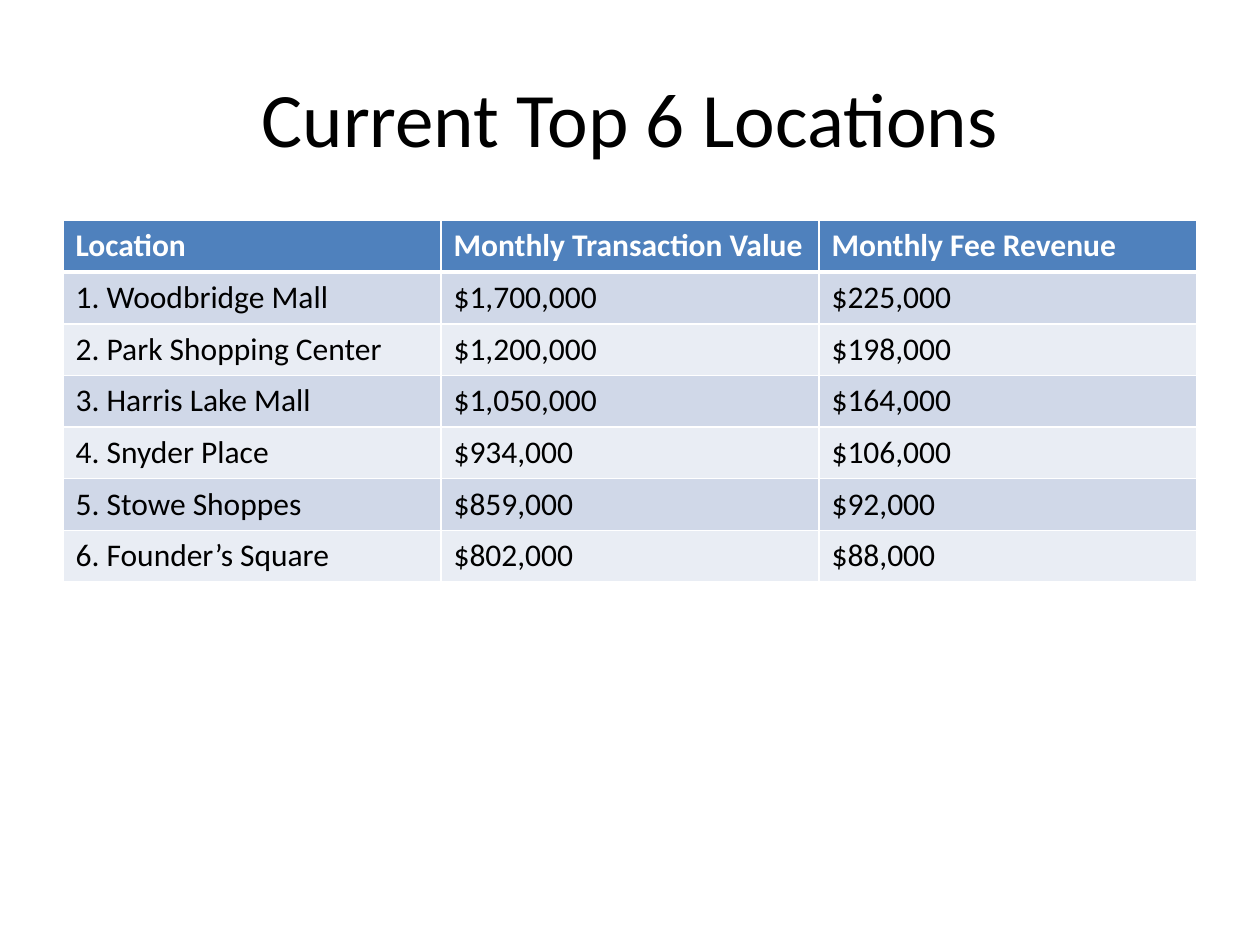
from typing import NamedTuple

from lxml.etree import SubElement
from pptx import Presentation
from pptx.dml.color import RGBColor
from pptx.enum.text import MSO_ANCHOR as Anchor, PP_ALIGN as Align
from pptx.oxml.ns import qn
from pptx.util import Inches, Pt

WHITE = RGBColor(0xFF, 0xFF, 0xFF)
BLACK = RGBColor(0x00, 0x00, 0x00)
HEADER_BLUE = RGBColor(0x4F, 0x81, 0xBD)
BANDS = (RGBColor(0xD0, 0xD8, 0xE8), RGBColor(0xE9, 0xED, 0xF4))

FONT = "Calibri"
SLIDE_WIDTH, SLIDE_HEIGHT = Inches(10), Inches(7.5)
MARGIN = int(SLIDE_WIDTH * 0.05)
CONTENT_WIDTH = SLIDE_WIDTH - 2 * MARGIN
ROW_HEIGHT = Inches(0.41)


class Location(NamedTuple):
    name: str
    transactions: str
    fees: str


HEADINGS = Location("Location", "Monthly Transaction Value", "Monthly Fee Revenue")
LOCATIONS = (
    Location("1. Woodbridge Mall", "$1,700,000", "$225,000"),
    Location("2. Park Shopping Center", "$1,200,000", "$198,000"),
    Location("3. Harris Lake Mall", "$1,050,000", "$164,000"),
    Location("4. Snyder Place", "$934,000", "$106,000"),
    Location("5. Stowe Shoppes", "$859,000", "$92,000"),
    Location("6. Founder’s Square", "$802,000", "$88,000"),
)


def write(frame, text: str, *, size=18, color=BLACK, bold=False, align=Align.LEFT) -> None:
    paragraph = frame.paragraphs[0]
    paragraph.alignment = align
    run = paragraph.add_run()
    run.text = text
    font = run.font
    font.name, font.size, font.bold = FONT, Pt(size), bold
    font.color.rgb = color


def set_borders(cell, **widths: float) -> None:
    """Draw white borders; widths are points keyed by side: L, R, T, B."""
    properties = cell._tc.get_or_add_tcPr()
    for side, width in widths.items():
        line = SubElement(properties, qn(f"a:ln{side}"), w=str(Pt(width)))
        fill = SubElement(line, qn("a:solidFill"))
        SubElement(fill, qn("a:srgbClr"), val=str(WHITE))


def add_title(slide, text: str) -> None:
    title = slide.shapes.title
    title.left, title.top = MARGIN, int(SLIDE_HEIGHT * 0.04)
    title.width, title.height = CONTENT_WIDTH, Inches(1.25)
    title.text_frame.vertical_anchor = Anchor.MIDDLE
    write(title.text_frame, text, size=44, align=Align.CENTER)


def add_location_table(slide, rows: tuple[Location, ...]) -> None:
    table = slide.shapes.add_table(
        len(rows), len(HEADINGS), MARGIN, Inches(1.75),
        CONTENT_WIDTH, ROW_HEIGHT * len(rows),
    ).table
    for r, location in enumerate(rows):
        is_header = r == 0
        for c, text in enumerate(location):
            cell = table.cell(r, c)
            # The rule under the header is thicker than the others
            set_borders(cell, L=1, R=1, T=3 if r == 1 else 1, B=3 if is_header else 1)
            cell.fill.solid()
            cell.fill.fore_color.rgb = HEADER_BLUE if is_header else BANDS[(r - 1) % 2]
            write(cell.text_frame, text, color=WHITE if is_header else BLACK, bold=is_header)


def main() -> None:
    deck = Presentation()
    deck.slide_width, deck.slide_height = SLIDE_WIDTH, SLIDE_HEIGHT
    slide = deck.slides.add_slide(deck.slide_layouts.get_by_name("Title Only"))
    add_title(slide, "Current Top 6 Locations")
    add_location_table(slide, (HEADINGS, *LOCATIONS))
    deck.save("out.pptx")


if __name__ == "__main__":
    main()
